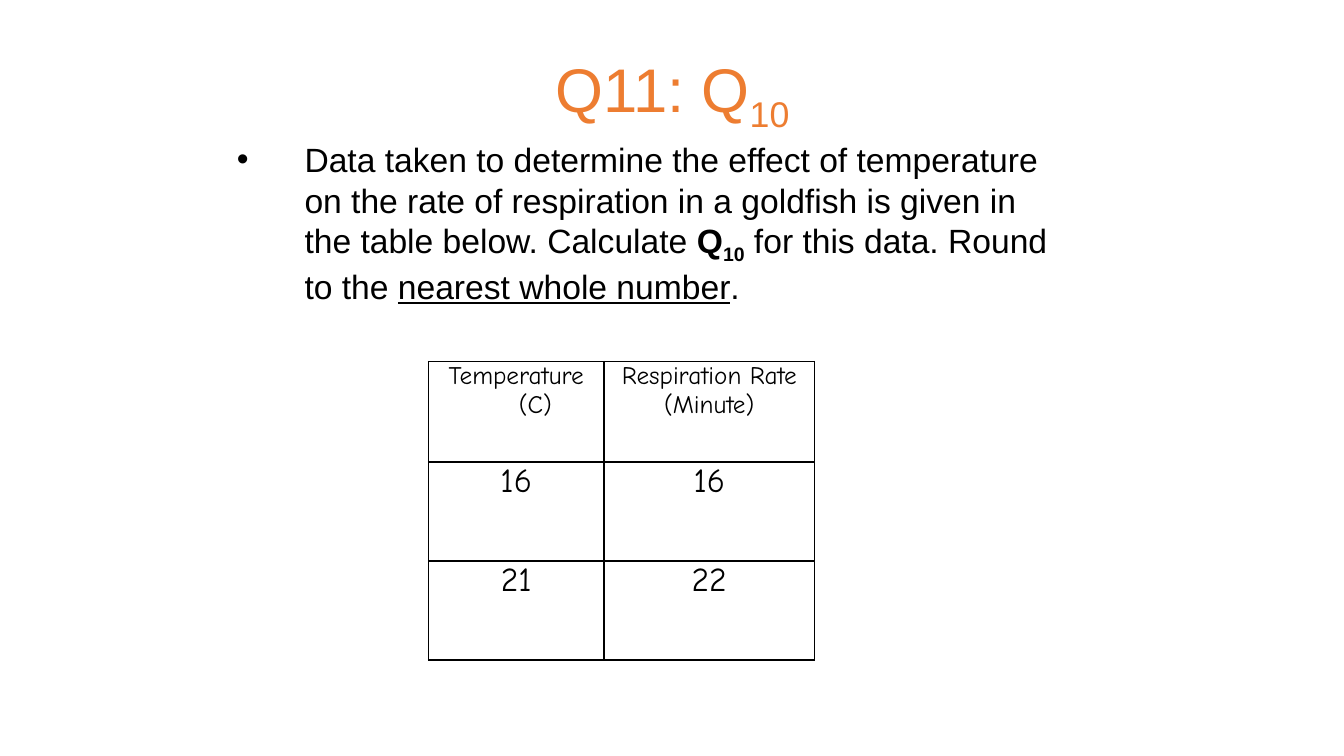
from dataclasses import dataclass

from lxml import etree
from pptx import Presentation
from pptx import util as u
from pptx.dml.color import RGBColor
from pptx.enum import text
from pptx.oxml.ns import qn

ORANGE = RGBColor(0xED, 0x7D, 0x31)
BLACK = RGBColor(0, 0, 0)
WIDTH, HEIGHT = u.Inches(13.33), u.Inches(7.5)
HEAD_FONT, CELL_FONT = "Arial", "Comic Neue"


@dataclass(frozen=True)
class Box:
    """Place and size as percentages of the slide."""
    x: float
    y: float
    w: float
    h: float

    def emu(self) -> tuple[int, int, int, int]:
        return (int(WIDTH * self.x / 100), int(HEIGHT * self.y / 100),
                int(WIDTH * self.w / 100), int(HEIGHT * self.h / 100))


@dataclass(frozen=True)
class Cell:
    lines: tuple[str, ...]
    size: int = 24


TITLE_BOX = Box(16.28, 4, 67.52, 16.5)
BODY_BOX = Box(16.88, 17.75, 63.15, 66)
TABLE_BOX = Box(31.88, 47.8, 28.73, 39.5)
COL_SHARES = (0.4545, 0.5455)
ROW_SHARES = (0.337, 0.3315, 0.3315)
ROWS = (
    (Cell(("Temperature (C)",), 18), Cell(("Respiration Rate", "(Minute)"), 18)),
    (Cell(("16",)), Cell(("16",))),
    (Cell(("21",)), Cell(("22",))),
)


def add_run(p, words: str, *, size: int, color: RGBColor = BLACK,
            font: str = HEAD_FONT, bold: bool = False,
            underline: bool = False, subscript: bool = False) -> None:
    r = p.add_run()
    r.text = words
    f = r.font
    f.size, f.name, f.bold, f.underline = u.Pt(size), font, bold, underline
    f.color.rgb = color
    if subscript:
        r._r.get_or_add_rPr().set("baseline", "-25000")


def hang(p, inches: float) -> None:
    pPr = p._p.get_or_add_pPr()
    pPr.set("marL", str(u.Inches(inches)))
    pPr.set("indent", str(-u.Inches(inches)))


def place(sp, box: Box, anchor: text.MSO_ANCHOR):
    sp.left, sp.top, sp.width, sp.height = box.emu()
    tf = sp.text_frame
    tf.word_wrap = True
    tf.auto_size = text.MSO_AUTO_SIZE.NONE
    tf.vertical_anchor = anchor
    return tf.paragraphs[0]


def add_borders(cell) -> None:
    tcPr = cell._tc.get_or_add_tcPr()
    for i, side in enumerate(("a:lnL", "a:lnR", "a:lnT", "a:lnB")):
        ln = etree.Element(qn(side), w=str(u.Pt(1)))
        fill = etree.SubElement(ln, qn("a:solidFill"))
        etree.SubElement(fill, qn("a:srgbClr"), val=str(BLACK))
        tcPr.insert(i, ln)


def fill_cell(cell, content: Cell) -> None:
    cell.margin_left = cell.margin_right = 0
    cell.margin_top = cell.margin_bottom = 0
    cell.fill.background()
    add_borders(cell)
    tf = cell.text_frame
    for i, line in enumerate(content.lines):
        p = tf.add_paragraph() if i else tf.paragraphs[0]
        p.alignment = text.PP_ALIGN.CENTER
        hang(p, 0.38)
        add_run(p, line, size=content.size, font=CELL_FONT)


def add_data_table(s) -> None:
    x, y, w, h = TABLE_BOX.emu()
    table = s.shapes.add_table(len(ROWS), len(COL_SHARES), x, y, w, h).table
    table.first_row = table.horz_banding = False
    for col, share in zip(table.columns, COL_SHARES):
        col.width = int(w * share)
    for row, share, contents in zip(table.rows, ROW_SHARES, ROWS):
        row.height = int(h * share)
        for cell, content in zip(row.cells, contents):
            fill_cell(cell, content)


def main() -> None:
    prs = Presentation()
    prs.slide_width, prs.slide_height = WIDTH, HEIGHT
    s = prs.slides.add_slide(prs.slide_layouts[1])

    # Title
    p = place(s.shapes.title, TITLE_BOX, text.MSO_ANCHOR.MIDDLE)
    p.alignment = text.PP_ALIGN.CENTER
    add_run(p, "Q11: Q", size=44, color=ORANGE)
    add_run(p, "10", size=44, color=ORANGE, subscript=True)

    # Question
    p = place(s.placeholders[1], BODY_BOX, text.MSO_ANCHOR.TOP)
    hang(p, 0.67)
    add_run(p, "Data taken to determine the effect of temperature on the rate "
               "of respiration in a goldfish is given in the table below. "
               "Calculate ", size=24)
    add_run(p, "Q", size=24, bold=True)
    add_run(p, "10", size=24, bold=True, subscript=True)
    add_run(p, " for this data. Round to the ", size=24)
    add_run(p, "nearest whole number", size=24, underline=True)
    add_run(p, ".", size=24)

    # Measurements
    add_data_table(s)
    prs.save("out.pptx")


if __name__ == "__main__":
    main()
